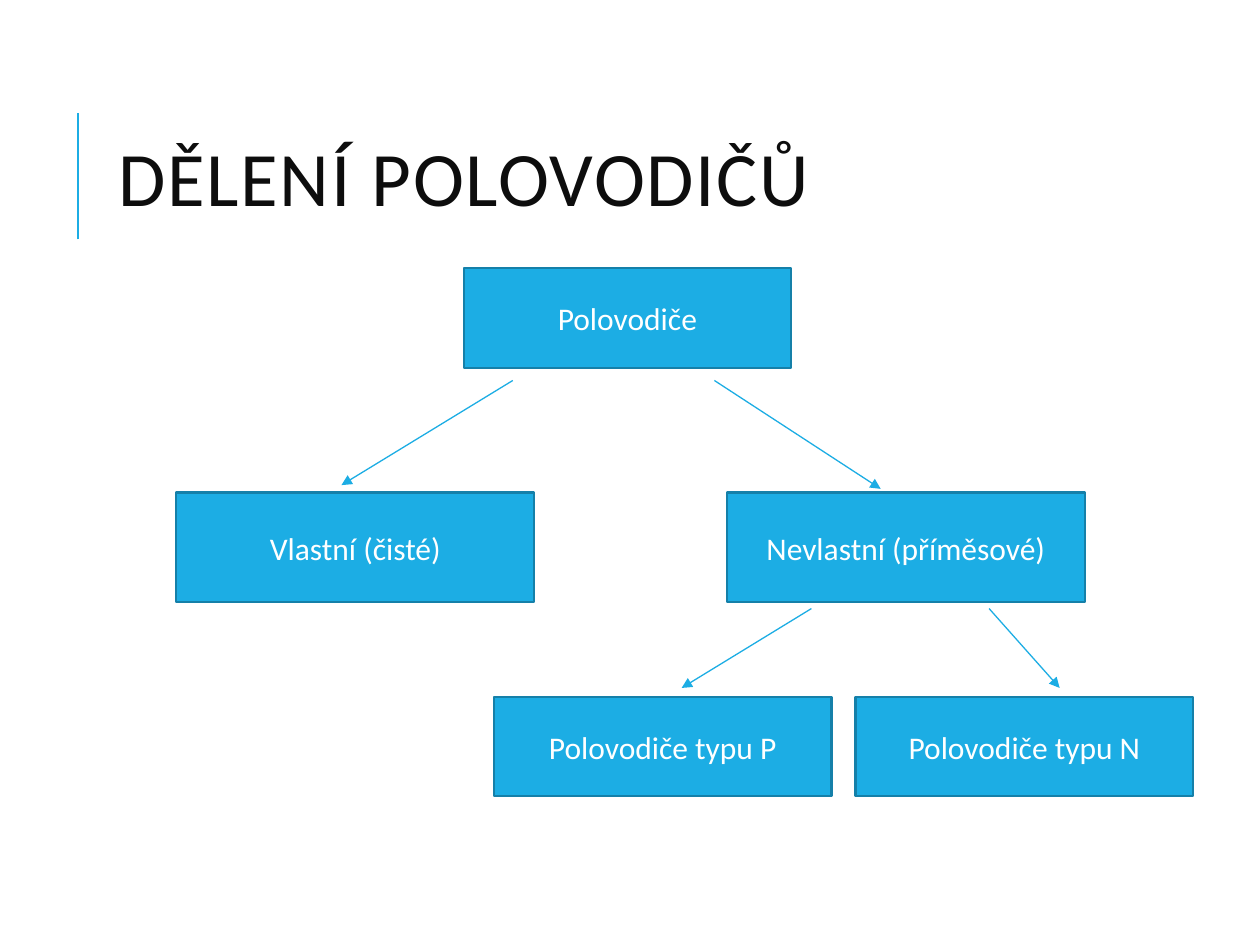
from lxml import etree
from pptx import Presentation
from pptx.dml.color import RGBColor
from pptx.enum import shapes, text
from pptx.oxml.ns import qn
from pptx.util import Inches, Pt

COLORS = {"accent": "1CADE4", "border": "1580A9", "title": "0D0D0D", "box_text": "FFFFFF"}
FONT = "Calibri"
TITLE = "DĚLENÍ POLOVODIČŮ"
PROCESS = shapes.MSO_SHAPE.FLOWCHART_PROCESS
RECT = shapes.MSO_SHAPE.RECTANGLE

# Each level: shape, top, width, height, [(label, left), ...]
LEVELS = [
    (PROCESS, 2.13, 2.6, 0.79, [("Polovodiče", 3.68)]),
    (RECT, 3.91, 2.84, 0.87, [("Vlastní (čisté)", 1.4), ("Nevlastní (příměsové)", 5.77)]),
    (RECT, 5.53, 2.68, 0.79, [("Polovodiče typu P", 3.92), ("Polovodiče typu N", 6.79)]),
]
# Each arrow: start, end
ARROWS = [
    ((4.07, 3.02), (2.71, 3.85)),
    ((5.67, 3.02), (6.99, 3.88)),
    ((6.44, 4.83), (5.41, 5.46)),
    ((7.85, 4.83), (8.41, 5.46)),
]


def rgb(name):
    return RGBColor.from_string(COLORS[name])


def write(sp, words, size, color, align):
    tf = sp.text_frame
    tf.word_wrap = True
    tf.vertical_anchor = text.MSO_ANCHOR.MIDDLE
    p = tf.paragraphs[0]
    p.text = words
    p.alignment = align
    p.font.name, p.font.size = FONT, Pt(size)
    p.font.color.rgb = rgb(color)
    return p


def add_line(slide, start, end, width, arrow=False):
    line = slide.shapes.add_connector(
        shapes.MSO_CONNECTOR.STRAIGHT, *map(Inches, start + end))
    line.line.color.rgb = rgb("accent")
    line.line.width = Pt(width)
    if arrow:
        etree.SubElement(line.line._get_or_add_ln(), qn("a:tailEnd"), type="triangle")
    etree.SubElement(line._element.spPr, qn("a:effectLst"))


def add_title(slide):
    sp = slide.shapes.add_textbox(*map(Inches, (0.84, 0.64, 7.97, 1.64)))
    p = write(sp, TITLE, 44, "title", text.PP_ALIGN.LEFT)
    p.line_spacing = 0.8
    p.runs[0].font._element.set("spc", "100")


def add_box(slide, kind, label, *place):
    sp = slide.shapes.add_shape(kind, *map(Inches, place))
    sp.shadow.inherit = False
    sp.fill.solid()
    sp.fill.fore_color.rgb = rgb("accent")
    sp.line.color.rgb = rgb("border")
    sp.line.width = Pt(1.25)
    write(sp, label, 18, "box_text", text.PP_ALIGN.CENTER)


def main():
    prs = Presentation()
    prs.slide_width, prs.slide_height = Inches(10), Inches(7.5)
    slide = prs.slides.add_slide(prs.slide_layouts[6])
    add_line(slide, (0.62, 1.9), (0.62, 0.9), 1.5)
    add_title(slide)
    for kind, top, width, height, boxes in LEVELS:
        for label, left in boxes:
            add_box(slide, kind, label, left, top, width, height)
    for start, end in ARROWS:
        add_line(slide, start, end, 0.75, arrow=True)
    prs.save("out.pptx")


if __name__ == "__main__":
    main()
